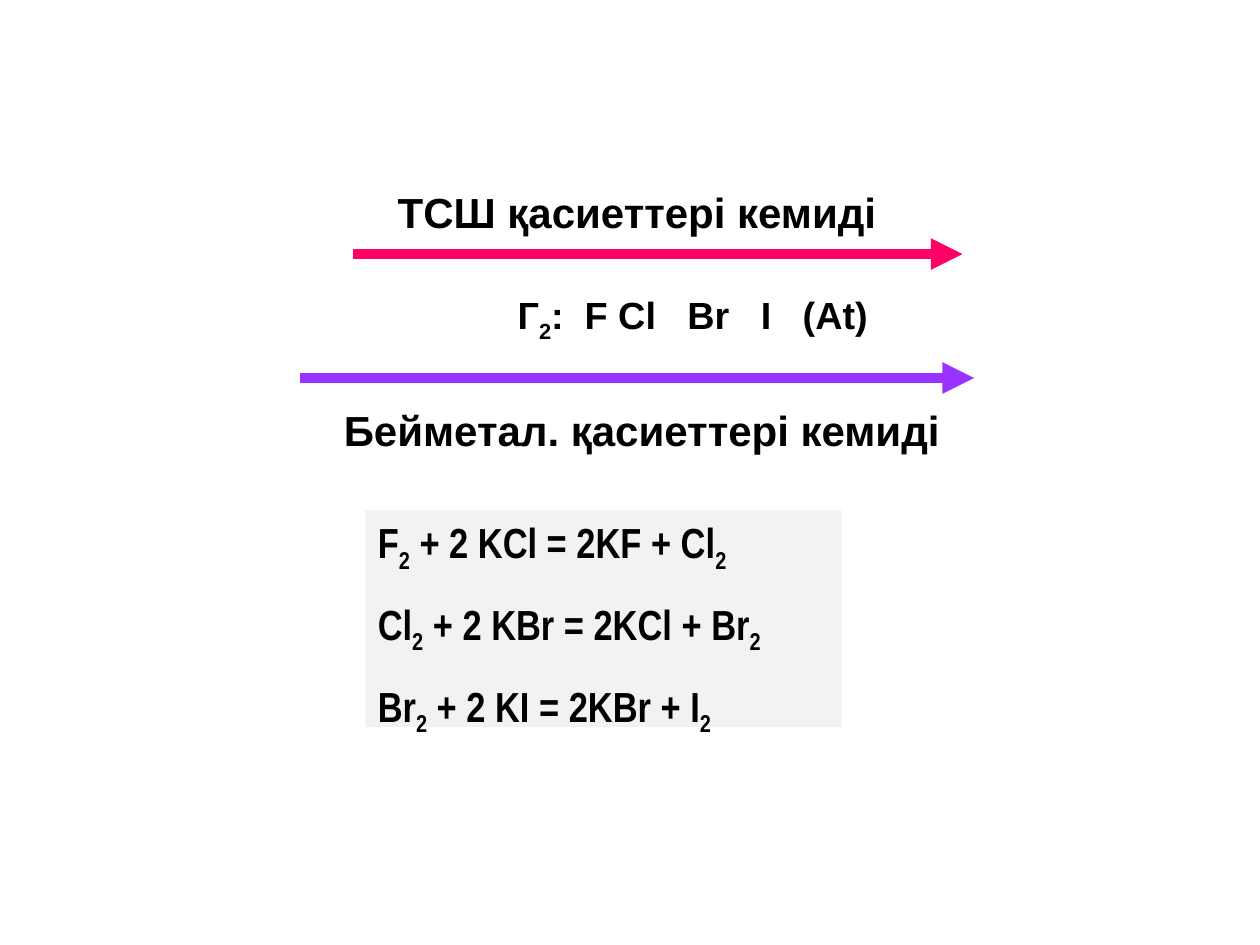
from lxml import etree
from pptx import Presentation
from pptx.dml.color import RGBColor
from pptx.enum.shapes import MSO_CONNECTOR as Connector, MSO_SHAPE as Shape
from pptx.enum.text import MSO_ANCHOR as Anchor, PP_ALIGN as Align
from pptx.oxml.ns import qn
from pptx.util import Pt

COLORS = {"text": "000000", "panel": "F2F2F2", "pink": "FF0066", "violet": "9933FF"}


class SlideBuilder:
    """Draws styled text, arrows and panels on one slide."""

    def __init__(self, slide):
        self.slide = slide
        self.font = "Arial"
        self.size = 24

    def color(self, name):
        return RGBColor.from_string(COLORS[name])

    def add_lines(self, shape, lines, font=None, size=None, align=Align.CENTER,
                  anchor=Anchor.TOP, line_spacing=1, gap=0):
        frame = shape.text_frame
        frame.word_wrap = True
        frame.vertical_anchor = anchor
        for index, line in enumerate(lines):
            paragraph = frame.add_paragraph() if index else frame.paragraphs[0]
            paragraph.alignment = align
            paragraph.line_spacing = line_spacing
            paragraph.space_before = Pt(gap if index else 0)
            for position, part in enumerate(line.split("_")):
                pieces = [(part[:1], True), (part[1:], False)] if position else [(part, False)]
                for text, subscript in pieces:
                    if text:
                        self.add_run(paragraph, text, subscript, font or self.font, size or self.size)

    def add_run(self, paragraph, text, subscript, font, size):
        run = paragraph.add_run()
        run.text = text
        run.font.name = font
        run.font.size = Pt(size)
        run.font.bold = True
        run.font.color.rgb = self.color("text")
        if subscript:
            run._r.get_or_add_rPr().set("baseline", "-25000")

    def text(self, left, top, width, height, line, **style):
        box = self.slide.shapes.add_textbox(Pt(left), Pt(top), Pt(width), Pt(height))
        self.add_lines(box, [line], **style)

    def panel(self, left, top, width, height, lines, **style):
        shape = self.slide.shapes.add_shape(
            Shape.RECTANGLE, Pt(left), Pt(top), Pt(width), Pt(height))
        shape.shadow.inherit = False
        shape.fill.solid()
        shape.fill.fore_color.rgb = self.color("panel")
        shape.line.fill.background()
        self.add_lines(shape, lines, **style)

    def arrow(self, start, end, y, color):
        connector = self.slide.shapes.add_connector(
            Connector.STRAIGHT, Pt(start), Pt(y), Pt(end), Pt(y))
        connector.line.color.rgb = self.color(color)
        connector.line.width = Pt(6)
        etree.SubElement(connector.line._get_or_add_ln(), qn("a:tailEnd"), type="triangle")
        etree.SubElement(connector._element.spPr, qn("a:effectLst"))


def main():
    presentation = Presentation()
    presentation.slide_width = Pt(720)
    presentation.slide_height = Pt(540)
    builder = SlideBuilder(presentation.slides.add_slide(presentation.slide_layouts[6]))

    builder.text(72, 165.6, 648, 31.7, "Г_2:  F Cl   Br   I   (At)",
                 size=21.6, anchor=Anchor.BOTTOM, line_spacing=0.9)
    builder.arrow(202, 550, 145.2, "pink")
    builder.text(190, 103, 348, 36.7, "ТСШ қасиеттері кемиді")
    builder.arrow(171.4, 556.6, 216, "violet")
    builder.text(184.3, 227.8, 365, 36.7, "Бейметал. қасиеттері кемиді")
    equations = [
        "F_2 + 2 KCl = 2KF + Cl_2",
        "Cl_2 + 2 KBr = 2KCl + Br_2",
        "Br_2 + 2 KI = 2KBr + I_2",
    ]
    builder.panel(208.8, 291.6, 272.2, 123.8, equations,
                  font="Arial Narrow", align=Align.LEFT, gap=14)
    presentation.save("out.pptx")


if __name__ == "__main__":
    main()
